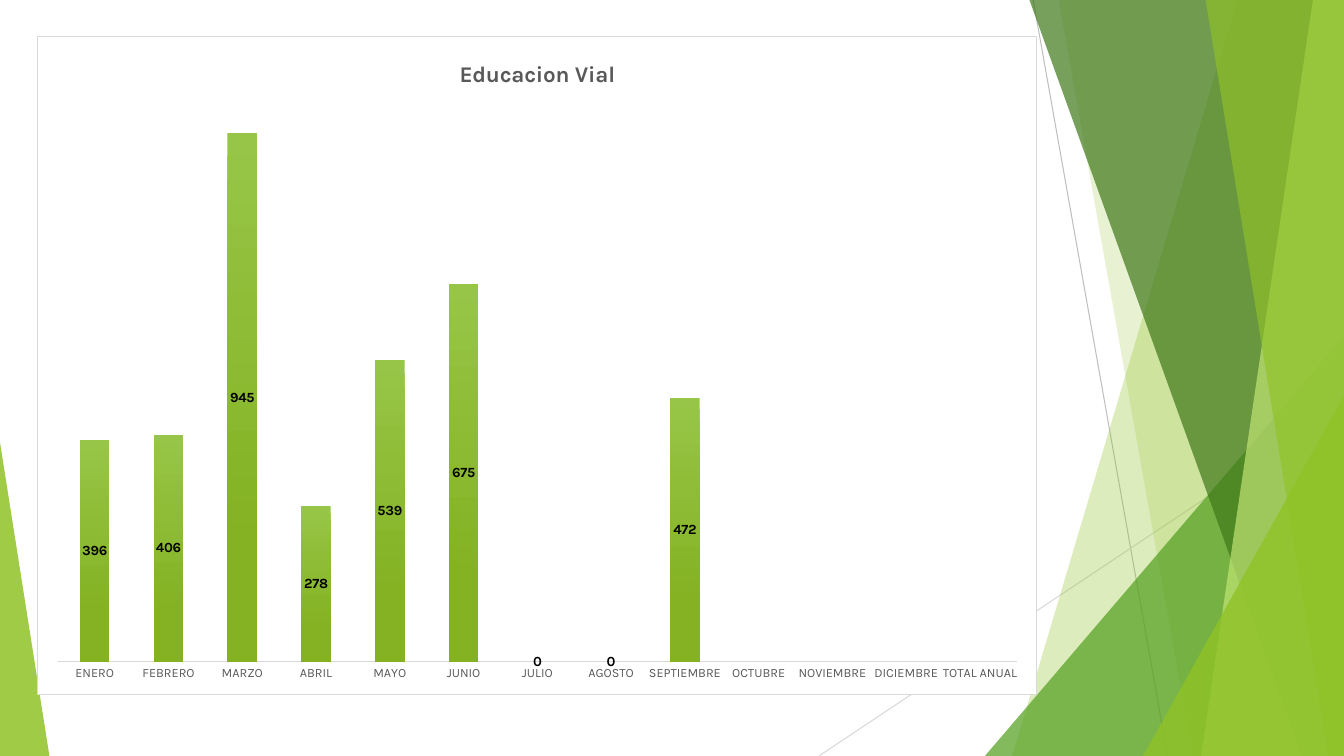
from dataclasses import dataclass

import lxml.etree
import pptx
import pptx.chart.data
import pptx.dml.color
import pptx.enum.chart
import pptx.enum.shapes
import pptx.oxml.ns
import pptx.util

Pt = pptx.util.Pt
qn = pptx.oxml.ns.qn


@dataclass(frozen=True)
class Theme:
    font: str = "Karla"
    lime: str = "90C226"
    green: str = "54A021"
    forest: str = "3F7819"
    pale: str = "C0E474"
    bar_top: str = "97C547"
    bar_base: str = "84B223"
    rule: str = "D9D9D9"
    dark_rule: str = "BFBFBF"
    paper: str = "FFFFFF"
    ink: str = "000000"
    muted: str = "595959"
    title_size: float = 16
    label_size: float = 10
    axis_size: float = 9
    hairline: float = 0.75


@dataclass(frozen=True)
class Box:
    left: float
    top: float
    width: float
    height: float

    @property
    def right(self):
        return self.left + self.width

    @property
    def bottom(self):
        return self.top + self.height


THEME = Theme()
PAGE = Box(0, 0, 960, 540)
CHART = Box(26.7, 26, 714.3, 470.5)
VISITS = {
    "ENERO": 396, "FEBRERO": 406, "MARZO": 945, "ABRIL": 278, "MAYO": 539,
    "JUNIO": 675, "JULIO": 0, "AGOSTO": 0, "SEPTIEMBRE": 472, "OCTUBRE": None,
    "NOVIEMBRE": None, "DICIEMBRE": None, "TOTAL ANUAL": None,
}


def rgb(value):
    return pptx.dml.color.RGBColor.from_string(value)


def tint(shape, color, opacity):
    shape.shadow.inherit = False
    shape.line.fill.background()
    shape.fill.solid()
    shape.fill.fore_color.rgb = rgb(color)
    fill = shape.element.spPr.find(qn("a:solidFill"))
    lxml.etree.SubElement(fill[0], qn("a:alpha"), val=str(opacity * 1000))


def add_rule(page, start, end, color):
    rule = page.shapes.add_connector(
        pptx.enum.shapes.MSO_CONNECTOR.STRAIGHT, *(Pt(value) for value in start + end))
    rule.line.color.rgb = rgb(color)
    rule.line.width = Pt(THEME.hairline)
    lxml.etree.SubElement(rule.element.spPr, qn("a:effectLst"))


def add_facet(page, box, top_left, top_right, bottom_left, color, opacity):
    top = box.top - 0.72
    builder = page.shapes.build_freeform(box.right - top_left, top, scale=Pt(1))
    builder.add_line_segments([
        (box.right - top_right, top),
        (box.right, box.bottom),
        (box.right - bottom_left, box.bottom),
    ])
    tint(builder.convert_to_shape(), color, opacity)


def add_corner(page, box, width, height, apex, color, opacity):
    left = box.right - width if apex else box.left
    corner = page.shapes.add_shape(
        pptx.enum.shapes.MSO_SHAPE.ISOSCELES_TRIANGLE,
        Pt(left), Pt(box.bottom - height), Pt(width), Pt(height))
    corner.adjustments[0] = apex
    tint(corner, color, opacity)


def add_backdrop(page, box):
    add_rule(page, (box.right - 222, box.top), (box.right - 126, box.bottom), THEME.dark_rule)
    add_rule(page, (box.right, box.top + 290), (box.right - 375, box.bottom), THEME.rule)
    add_facet(page, box, 75.8, 0, 237, THEME.lime, 30)
    add_facet(page, box, 204, 0, 108, THEME.lime, 20)
    add_corner(page, box, 256.5, 300, 1, THEME.green, 72)
    add_facet(page, box, 225, 0, 30.5, THEME.forest, 70)
    add_facet(page, box, 22, 0, 102, THEME.pale, 70)
    add_facet(page, box, 99, 0, 11, THEME.lime, 65)
    add_corner(page, box, 143.5, 257, 1, THEME.lime, 80)
    add_corner(page, box, 35.3, 224, 0, THEME.lime, 85)


def set_font(font, size, color, bold=False):
    font.name = THEME.font
    font.size = Pt(size)
    font.bold = bold
    font.color.rgb = rgb(color)


def place_plot(chart, **shares):
    area = chart.element.find(".//" + qn("c:plotArea"))
    layout = area.find(qn("c:layout"))
    if layout is None:
        layout = lxml.etree.Element(qn("c:layout"))
        area.insert(0, layout)
    manual = lxml.etree.SubElement(layout, qn("c:manualLayout"))
    settings = {"layoutTarget": "inner", "xMode": "edge", "yMode": "edge", **shares}
    for name, value in settings.items():
        lxml.etree.SubElement(manual, qn("c:" + name), val=str(value))


def frame_chart(chart):
    frame = lxml.etree.Element(qn("c:spPr"))
    outline = lxml.etree.Element(qn("a:ln"), w=str(Pt(THEME.hairline)))
    for parent, color in ((frame, THEME.paper), (outline, THEME.rule)):
        fill = lxml.etree.SubElement(parent, qn("a:solidFill"))
        lxml.etree.SubElement(fill, qn("a:srgbClr"), val=color)
    frame.append(outline)
    chart.element.find(qn("c:chart")).addnext(frame)


def style_bars(plot):
    plot.gap_width = 150
    plot.overlap = 100
    plot.vary_by_categories = False
    bars = plot.series[0]
    fill = bars.format.fill
    fill.gradient()
    fill.gradient_angle = 270
    stops = ((0, THEME.bar_top), (0.78, THEME.bar_base))
    for stop, (position, color) in zip(fill.gradient_stops, stops):
        stop.position = position
        stop.color.rgb = rgb(color)
    labels = bars.data_labels
    labels.show_value = True
    labels.position = pptx.enum.chart.XL_LABEL_POSITION.CENTER
    set_font(labels.font, THEME.label_size, THEME.ink, True)


def add_visits_chart(page, box):
    data = pptx.chart.data.CategoryChartData()
    data.categories = list(VISITS)
    data.add_series("Series 1", list(VISITS.values()))
    chart = page.shapes.add_chart(
        pptx.enum.chart.XL_CHART_TYPE.COLUMN_STACKED,
        Pt(box.left), Pt(box.top), Pt(box.width), Pt(box.height), data).chart
    set_font(chart.font, THEME.label_size, THEME.ink)
    chart.has_legend = False
    chart.has_title = True
    span = chart.chart_title.text_frame.paragraphs[0].add_run()
    span.text = "Educacion Vial"
    set_font(span.font, THEME.title_size, THEME.muted, True)
    months = chart.category_axis
    months.major_tick_mark = pptx.enum.chart.XL_TICK_MARK.NONE
    months.format.line.color.rgb = rgb(THEME.rule)
    months.format.line.width = Pt(1)
    set_font(months.tick_labels.font, THEME.axis_size, THEME.muted)
    amounts = chart.value_axis
    amounts.minimum_scale = 0
    amounts.maximum_scale = 1000
    amounts.has_major_gridlines = False
    amounts.visible = False
    style_bars(chart.plots[0])
    place_plot(chart, x=0.02, y=0.1, w=0.96, h=0.85)
    frame_chart(chart)


def main():
    deck = pptx.Presentation()
    deck.slide_width = Pt(PAGE.width)
    deck.slide_height = Pt(PAGE.height)
    page = deck.slides.add_slide(deck.slide_layouts[6])
    add_backdrop(page, PAGE)
    add_visits_chart(page, CHART)
    deck.save("out.pptx")


if __name__ == "__main__":
    main()
